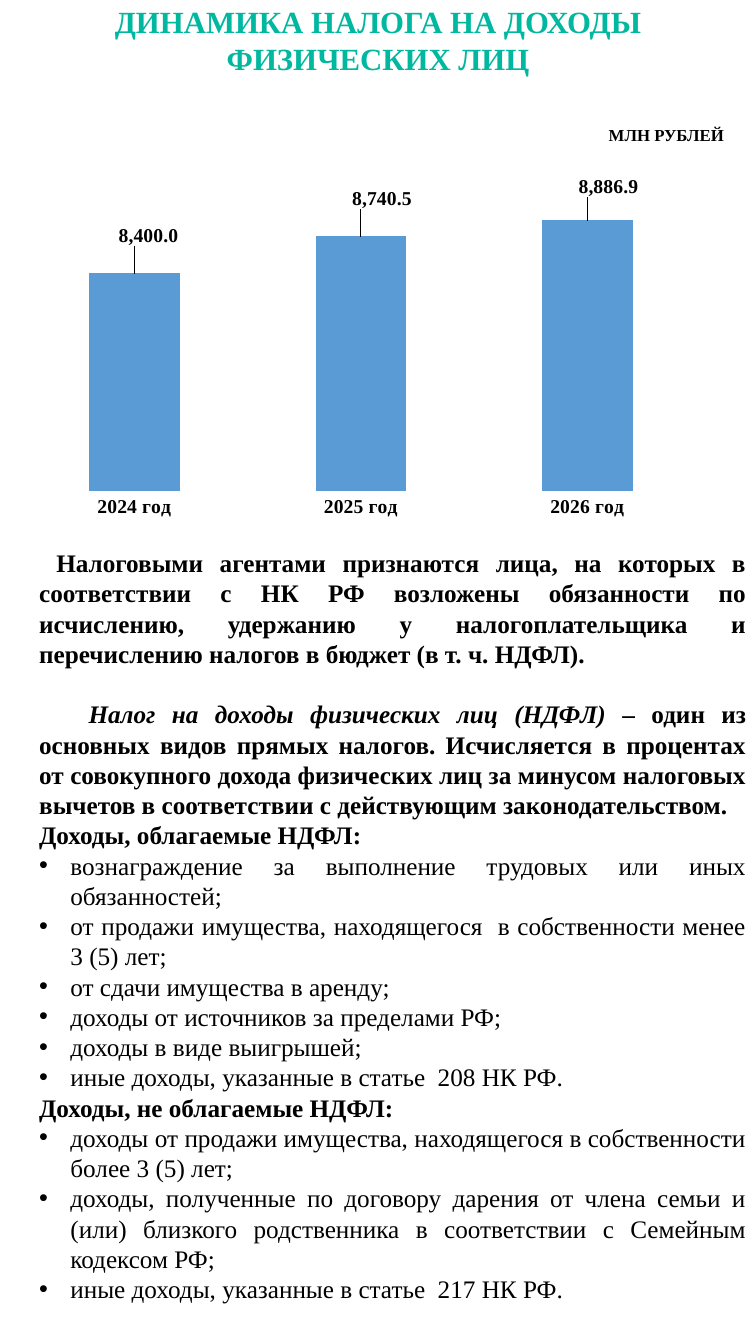
import pptx
import pptx.util
import pptx.oxml
import pptx.chart.data
import pptx.dml.color
import pptx.enum.chart
import pptx.enum.text

PX = 9144
FONT = "Times New Roman"
COLORS = {"title": "00B8A0", "text": "000000", "bar": "5B9BD5"}
ALIGN = pptx.enum.text.PP_ALIGN
NS = 'xmlns:c="http://schemas.openxmlformats.org/drawingml/2006/chart"'


def style(font, size, color="text", bold=True):
    font.name = FONT
    font.size = pptx.util.Pt(size)
    font.bold = bold
    font.color.rgb = pptx.dml.color.RGBColor.from_string(COLORS[color])


def add_text_frame(x, y, w, h):
    tf = s.shapes.add_textbox(x * PX, y * PX, w * PX, h * PX).text_frame
    tf.word_wrap = True
    tf.auto_size = pptx.enum.text.MSO_AUTO_SIZE.SHAPE_TO_FIT_TEXT
    return tf


prs = pptx.Presentation()
prs.slide_width = 750 * PX
prs.slide_height = 1333 * PX
s = prs.slides.add_slide(prs.slide_layouts[6])

tf = add_text_frame(0, -2, 750, 84)
tf.text = "ДИНАМИКА НАЛОГА НА ДОХОДЫ ФИЗИЧЕСКИХ ЛИЦ"
tf.paragraphs[0].alignment = ALIGN.CENTER
style(tf.paragraphs[0].runs[0].font, 22, "title")

data = pptx.chart.data.CategoryChartData(number_format="#,##0.0")
data.categories = ["2024 год", "2025 год", "2026 год"]
data.add_series("Series 1", [8400, 8740.5, 8886.9])
chart = s.shapes.add_chart(
    pptx.enum.chart.XL_CHART_TYPE.COLUMN_CLUSTERED,
    0, 148 * PX, 702 * PX, 377 * PX, data).chart
chart.has_legend = False
chart.has_title = False
chart.font.name = "Calibri"
chart.font.size = pptx.util.Pt(10)

axis = chart.category_axis
axis.major_tick_mark = pptx.enum.chart.XL_TICK_MARK.NONE
axis.format.line.fill.background()
style(axis.tick_labels.font, 14)
axis = chart.value_axis
axis.minimum_scale = 6400
axis.maximum_scale = 9400
axis.has_major_gridlines = False
axis.visible = False

plot = chart.plots[0]
plot.gap_width = 150
plot.vary_by_categories = False
ser = plot.series[0]
ser.format.fill.solid()
ser.format.fill.fore_color.rgb = pptx.dml.color.RGBColor.from_string(COLORS["bar"])
labels = ser.data_labels
labels.show_value = True
labels.number_format = "#,##0.0"
labels.number_format_is_linked = False
style(labels.font, 14)
for i in range(3):
    label = ser.points[i].data_label
    style(label.font, 14)
    label.position = pptx.enum.chart.XL_LABEL_POSITION.OUTSIDE_END

offsets = [(0.02, -0.06), (0.03, -0.06), (0.03, -0.05)]
for label, (dx, dy) in zip(chart._chartSpace.xpath(".//c:dLbl"), offsets):
    label.insert(1, pptx.oxml.parse_xml(
        f'<c:layout {NS}><c:manualLayout><c:x val="{dx}"/><c:y val="{dy}"/>'
        '</c:manualLayout></c:layout>'))
    label.insert(2, pptx.oxml.parse_xml(
        f'<c:numFmt {NS} formatCode="#,##0.0" sourceLinked="0"/>'))

plot_area = chart._chartSpace.xpath(".//c:plotArea")[0]
for layout in plot_area.xpath("./c:layout"):
    plot_area.remove(layout)
plot_area.insert(0, pptx.oxml.parse_xml(
    f'<c:layout {NS}><c:manualLayout><c:layoutTarget val="inner"/>'
    '<c:xMode val="edge"/><c:yMode val="edge"/><c:x val="0.03"/><c:y val="0.04"/>'
    '<c:w val="0.96"/><c:h val="0.86"/></c:manualLayout></c:layout>'))

tf = add_text_frame(29, 538, 721, 767)
intro = [
    (17, 0, ["Налоговыми агентами признаются лица, на которых в соответствии с НК РФ "
             "возложены обязанности по исчислению, удержанию у налогоплательщика и "
             "перечислению налогов в бюджет (в т. ч. НДФЛ)."]),
    (49, 21.6, ["Налог на доходы физических лиц (НДФЛ)",
                " – один из основных видов прямых налогов. Исчисляется в процентах от "
                "совокупного дохода физических лиц за минусом налоговых вычетов в "
                "соответствии с действующим законодательством."]),
]
p = tf.paragraphs[0]
for indent, gap, parts in intro:
    if gap:
        p = tf.add_paragraph()
        p.space_before = pptx.util.Pt(gap)
    p.alignment = ALIGN.JUSTIFY
    p._p.get_or_add_pPr().set("indent", str(indent * PX))
    for part in parts:
        r = p.add_run()
        r.text = part
        style(r.font, 18)
p.runs[0].font.italic = True

income = {
    "Доходы, облагаемые НДФЛ:": [
        "вознаграждение за выполнение трудовых или иных обязанностей;",
        "от продажи имущества, находящегося  в собственности менее 3 (5) лет;",
        "от сдачи имущества в аренду;",
        "доходы от источников за пределами РФ;",
        "доходы в виде выигрышей;",
        "иные доходы, указанные в статье  208 НК РФ.",
    ],
    "Доходы, не облагаемые НДФЛ:": [
        "доходы от продажи имущества, находящегося в собственности более 3 (5) лет;",
        "доходы, полученные по договору дарения от члена семьи и (или) близкого "
        "родственника в соответствии с Семейным кодексом РФ;",
        "иные доходы, указанные в статье  217 НК РФ.",
    ],
}
for heading, items in income.items():
    for text in [heading, *items]:
        p = tf.add_paragraph()
        p.text = text
        p.alignment = ALIGN.JUSTIFY
        style(p.runs[0].font, 18, bold=text == heading)
        if text != heading:
            pPr = p._p.get_or_add_pPr()
            pPr.set("marL", str(31 * PX))
            pPr.set("indent", str(-31 * PX))
            for tag, name, value in [("buFont", "typeface", "Arial"), ("buChar", "char", "•")]:
                pPr.append(pptx.oxml.parse_xml(
                    '<a:%s xmlns:a="http://schemas.openxmlformats.org/drawingml/2006/main" '
                    '%s="%s"/>' % (tag, name, value)))

tf = add_text_frame(594, 119, 142, 30)
tf.text = "МЛН РУБЛЕЙ"
style(tf.paragraphs[0].runs[0].font, 12)

prs.save("out.pptx")
